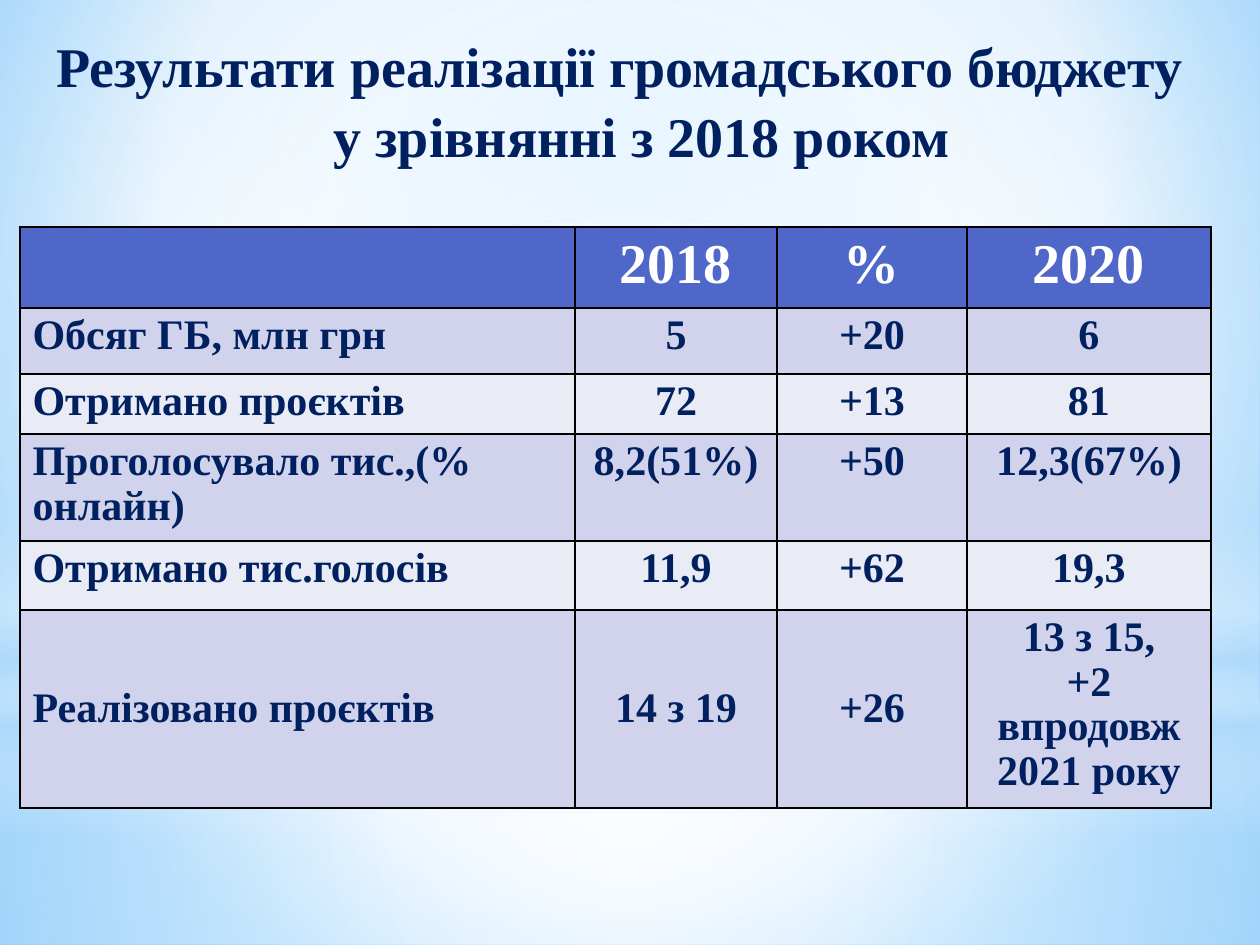
import pptx
import pptx.util
import pptx.dml.color
import pptx.enum.shapes
import pptx.enum.text
import pptx.oxml
import pptx.oxml.ns

PX = 914400 / 126
FONT = "Times New Roman"
NAVY, WHITE, BLUE = "002060", "FFFFFF", "4E67C8"
BAND_COLOURS = ["D0D3EB", "E9EBF5"]
SKY = "B4DCFA"
ALIGN = pptx.enum.text.PP_ALIGN
ANCHOR = pptx.enum.text.MSO_ANCHOR
SHAPE = pptx.enum.shapes.MSO_SHAPE

TITLE = "Результати реалізації громадського бюджету у зрівнянні з 2018 роком"
COLUMN_WIDTHS = [555, 202, 190, 244]
ROW_HEIGHTS = [81, 66, 60, 107, 69, 198]
ROWS = [
    ["", "2018", "%", "2020"],
    ["Обсяг ГБ, млн грн", "5", "+20", "6"],
    ["Отримано проєктів", "72", "+13", "81"],
    ["Проголосувало тис.,(% онлайн)", "8,2(51%)", "+50", "12,3(67%)"],
    ["Отримано тис.голосів", "11,9", "+62", "19,3"],
    ["Реалізовано проєктів", "14 з 19", "+26", "13 з 15,\n+2 впродовж 2021 року"],
]

CENTRE = (50, 50, 50, 50)
# preset, box in px, stops (position, colour, opacity), focus (None: vertical)
GLOWS = [
    (SHAPE.RECTANGLE, (0, 703, 1260, 242),
     [(0, WHITE, 91), (37, WHITE, 76), (100, SKY, 79)], CENTRE),
    (SHAPE.RECTANGLE, (0, 0, 1260, 703),
     [(0, WHITE, 89), (48, WHITE, 62), (100, SKY, 79)], CENTRE),
    (SHAPE.RECTANGLE, (0, 519, 1260, 315),
     [(0, WHITE, 0), (29, WHITE, 30), (45, SKY, 40), (55, WHITE, 26),
      (65, SKY, 60), (100, WHITE, 0)], None),
    (SHAPE.OVAL, (0, 220, 1260, 703),
     [(0, WHITE, 100), (56, WHITE, 0)], CENTRE),
]


def px(length):
    return pptx.util.Emu(round(length * PX))


def colour(value):
    return pptx.dml.color.RGBColor.from_string(value)


def xml(markup):
    """Parse one DrawingML element whose tag has the a: prefix."""
    tag_end = min(markup.index(mark) for mark in " >" if mark in markup)
    namespace = " " + pptx.oxml.ns.nsdecls("a")
    return pptx.oxml.parse_xml(markup[:tag_end] + namespace + markup[tag_end:])


def set_values(target, values):
    for name, value in values.items():
        setattr(target, name, value)


def set_gradient(fill, owner, stops, focus):
    """Give the fill held by the owner element a radial or vertical gradient."""
    fill.gradient()
    stop_markup = "".join(
        f'<a:gs pos="{position * 1000}"><a:srgbClr val="{value}">'
        f'<a:alpha val="{opacity * 1000}"/></a:srgbClr></a:gs>'
        for position, value, opacity in stops)
    if focus:
        sides = " ".join(f'{side}="{value * 1000}"' for side, value in zip("ltrb", focus))
        direction = f'<a:path path="circle"><a:fillToRect {sides}/></a:path>'
    else:
        direction = '<a:lin ang="5400000" scaled="0"/>'
    old = owner.find(".//" + pptx.oxml.ns.qn("a:gradFill"))
    old.getparent().replace(old, xml(
        f'<a:gradFill rotWithShape="1"><a:gsLst>{stop_markup}</a:gsLst>{direction}</a:gradFill>'))


def format_text(frame, size, value, alignment, spacing):
    for paragraph in frame.paragraphs:
        set_values(paragraph, {"alignment": alignment, "line_spacing": spacing,
                               "space_before": 0})
        set_values(paragraph.font, {"name": FONT, "size": pptx.util.Pt(size), "bold": True})
        paragraph.font.color.rgb = colour(value)


def add_background(slide):
    set_gradient(slide.background.fill, slide.element,
                 [(0, "9ED5FF", 100), (60, WHITE, 100), (100, "5BB9FF", 100)],
                 (20, 10, 20, 60))
    for preset, box, stops, focus in GLOWS:
        glow = slide.shapes.add_shape(preset, *map(px, box))
        glow.shadow.inherit = False
        glow.line.fill.background()
        set_gradient(glow.fill, glow.element, stops, focus)


def add_title(slide):
    title = slide.shapes.title
    title.element.getparent().append(title.element)
    set_values(title, {"left": px(29), "top": px(20), "width": px(1182), "height": px(157)})
    frame = title.text_frame
    set_values(frame, {"text": TITLE, "word_wrap": True, "vertical_anchor": ANCHOR.MIDDLE})
    properties = frame.paragraphs[0]._p.get_or_add_pPr()
    properties.set("marL", str(px(44)))
    properties.set("indent", str(px(-44)))
    format_text(frame, 32, NAVY, ALIGN.CENTER, 1.05)


def add_borders(cell):
    properties = cell._tc.get_or_add_tcPr()
    for index, side in enumerate(["lnL", "lnR", "lnT", "lnB"]):
        properties.insert(index, xml(
            f'<a:{side} w="12700"><a:solidFill><a:srgbClr val="000000"/></a:solidFill></a:{side}>'))


def add_results_table(slide):
    table = slide.shapes.add_table(
        len(ROWS), len(COLUMN_WIDTHS), px(20), px(227),
        px(sum(COLUMN_WIDTHS)), px(sum(ROW_HEIGHTS))).table
    for column, width in zip(table.columns, COLUMN_WIDTHS):
        column.width = px(width)
    last_row = len(ROWS) - 1
    for row_index, (texts, height) in enumerate(zip(ROWS, ROW_HEIGHTS)):
        table.rows[row_index].height = px(height)
        header = row_index == 0
        fill = BLUE if header else BAND_COLOURS[(row_index - 1) % 2]
        size, text_colour, spacing = (32, WHITE, 1.0) if header else (24, NAVY, 0.96)
        for column_index, text in enumerate(texts):
            cell = table.cell(row_index, column_index)
            cell.text = text
            cell.fill.solid()
            cell.fill.fore_color.rgb = colour(fill)
            add_borders(cell)
            if row_index == last_row:
                cell.vertical_anchor = ANCHOR.MIDDLE
            alignment = ALIGN.CENTER if column_index else ALIGN.LEFT
            format_text(cell.text_frame, size, text_colour, alignment, spacing)
    table.cell(last_row, len(COLUMN_WIDTHS) - 1).vertical_anchor = ANCHOR.TOP


def main():
    presentation = pptx.Presentation()
    set_values(presentation, {"slide_width": px(1260), "slide_height": px(945)})
    slide = presentation.slides.add_slide(presentation.slide_layouts[5])
    add_background(slide)
    add_title(slide)
    add_results_table(slide)
    presentation.save("out.pptx")


if __name__ == "__main__":
    main()
